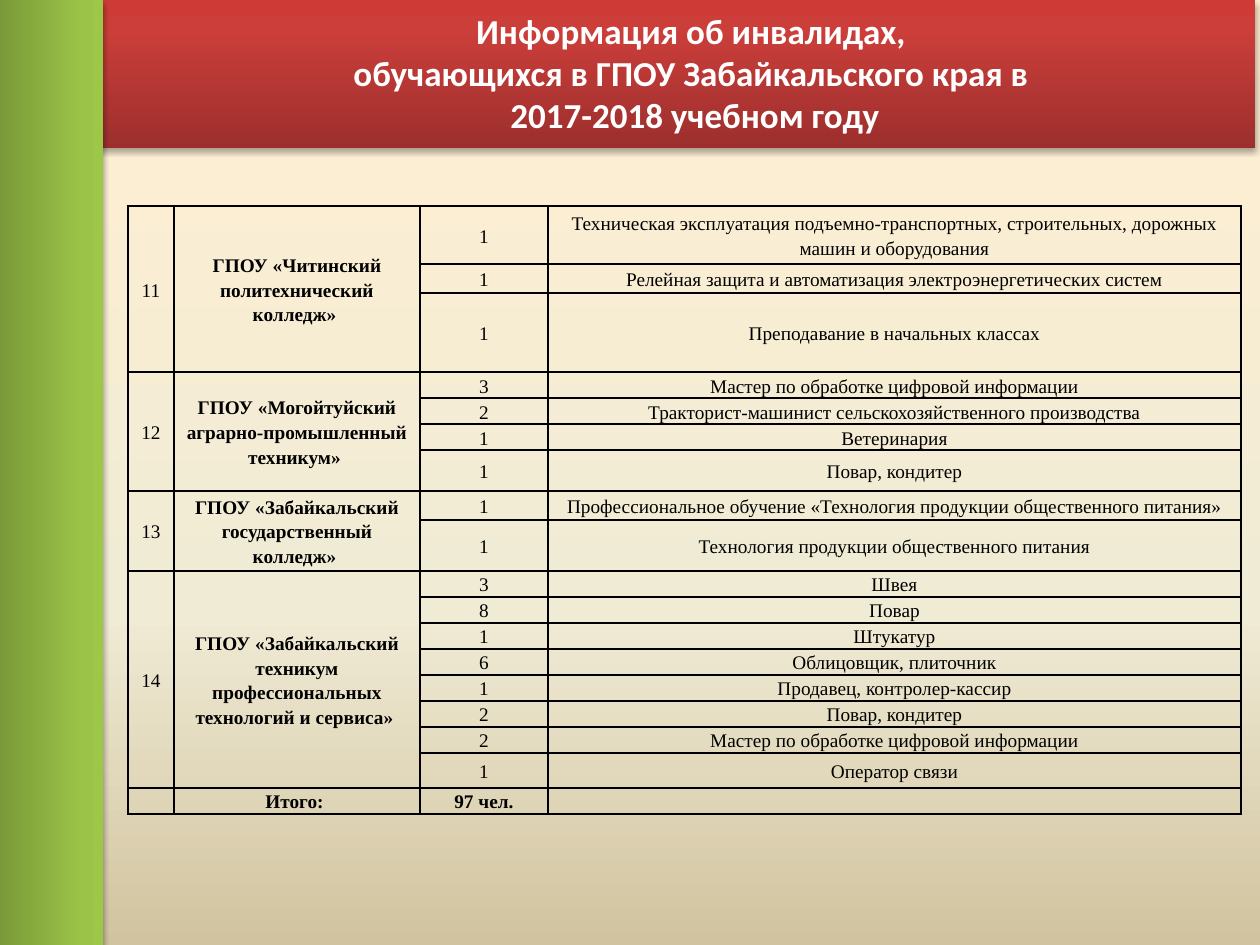
from lxml.etree import SubElement
from pptx import Presentation
from pptx.dml.color import RGBColor
from pptx.enum.shapes import MSO_SHAPE
from pptx.enum.text import MSO_ANCHOR, MSO_AUTO_SIZE, PP_ALIGN
from pptx.oxml import parse_xml
from pptx.oxml.ns import nsdecls, qn
from pptx.util import Pt

PX = 914400 / 126
COLORS = {
    "text": "000000", "title": "FFFFFF", "shadow": "000000", "border": "000000",
    "sand_top": "FFEFD1", "sand_mid": "F0EBD5", "sand_bottom": "D1C39F",
    "red_dark": "9C2F2D", "red_mid": "CB3E3A", "red": "CE3B37",
    "green_dark": "779737", "green_mid": "9BC348", "green": "9DC746",
}
TITLE_FORMAT = {"name": "Calibri", "size": Pt(20), "bold": True}
CELL_FORMAT = {"name": "Times New Roman", "size": Pt(11)}
CELL_FRAME = {"margin_left": Pt(3), "margin_right": Pt(3), "margin_top": 0,
              "margin_bottom": 0, "vertical_anchor": MSO_ANCHOR.MIDDLE}

TITLE_LINES = ["Информация об инвалидах, ",
               "обучающихся в ГПОУ Забайкальского края в ",
               "2017-2018 учебном году"]
COLUMN_WIDTHS = [46, 246, 128, 693]
# Each college: number, name, then (students, profession, row height)
COLLEGES = [
    ("11", "ГПОУ «Читинский политехнический колледж» ", [
        ("1", "Техническая эксплуатация подъемно-транспортных, строительных, "
              "дорожных машин и оборудования", 58),
        ("1", "Релейная защита и автоматизация электроэнергетических систем", 29),
        ("1", "Преподавание в начальных классах", 79)]),
    ("12", "ГПОУ «Могойтуйский аграрно-промышленный техникум» ", [
        ("3", "Мастер по обработке цифровой информации", 26),
        ("2", "Тракторист-машинист сельскохозяйственного производства", 26),
        ("1", "Ветеринария", 26),
        ("1", "Повар, кондитер", 41)]),
    ("13", "ГПОУ «Забайкальский государственный колледж» ", [
        ("1", "Профессиональное обучение «Технология продукции "
              "общественного питания»", 29),
        ("1", "Технология продукции общественного питания", 51)]),
    ("14", "ГПОУ «Забайкальский техникум профессиональных технологий и сервиса» ", [
        ("3", "Швея", 26),
        ("8", "Повар", 26),
        ("1", "Штукатур", 26),
        ("6", "Облицовщик, плиточник", 26),
        ("1", "Продавец, контролер-кассир", 26),
        ("2", "Повар, кондитер", 26),
        ("2", "Мастер по обработке цифровой информации", 26),
        ("1", "Оператор связи", 35)]),
]
TOTAL_ROW = ["", "Итого: ", "97 чел.", ""]
TOTAL_HEIGHT = 26


def emu(*lengths):
    return [round(length * PX) for length in lengths]


def apply_format(target, values):
    for key, value in values.items():
        setattr(target, key, value)


def fill_gradient(fill, owner, stops, angle):
    fill.gradient()
    fill.gradient_angle = angle
    stop_list = owner.find(".//" + qn("a:gsLst"))
    stop_list.clear()
    for position, color in stops:
        stop = SubElement(stop_list, qn("a:gs"), pos=str(position * 1000))
        SubElement(stop, qn("a:srgbClr"), val=COLORS[color])


def add_band(slide, box, hue, rotation=0):
    band = slide.shapes.add_shape(MSO_SHAPE.RECTANGLE, *emu(*box))
    band.rotation = rotation
    band.line.fill.background()
    stops = [(0, hue + "_dark"), (80, hue + "_mid"), (100, hue)]
    fill_gradient(band.fill, band.element, stops, 90)
    band.element.spPr.append(parse_xml(
        f'<a:effectLst {nsdecls("a")}><a:outerShdw blurRad="{Pt(3.1)}" '
        f'dist="{Pt(1.8)}" dir="5400000" rotWithShape="0">'
        f'<a:srgbClr val="{COLORS["shadow"]}"><a:alpha val="35000"/></a:srgbClr>'
        '</a:outerShdw></a:effectLst>'))


def write_paragraph(paragraph, text, values, color, spacing):
    paragraph.alignment = PP_ALIGN.CENTER
    paragraph.line_spacing = spacing
    run = paragraph.add_run()
    run.text = text
    apply_format(run.font, values)
    run.font.color.rgb = RGBColor.from_string(COLORS[color])


def place_title(slide, box):
    title = slide.shapes.title
    slide.shapes.element.append(title.element)  # in front of the bands
    apply_format(title, dict(zip(("left", "top", "width", "height"), emu(*box))))
    frame = title.text_frame
    apply_format(frame, {"word_wrap": True, "auto_size": MSO_AUTO_SIZE.NONE,
                         "vertical_anchor": MSO_ANCHOR.MIDDLE})
    for index, line in enumerate(TITLE_LINES):
        paragraph = frame.add_paragraph() if index else frame.paragraphs[0]
        write_paragraph(paragraph, line, TITLE_FORMAT, "title", 1.0)


def style_cell(cell):
    apply_format(cell, CELL_FRAME)
    cell.fill.background()
    properties = cell._tc.get_or_add_tcPr()
    for index, side in enumerate(("lnL", "lnR", "lnT", "lnB")):
        properties.insert(index, parse_xml(
            f'<a:{side} {nsdecls("a")} w="{Pt(1)}"><a:solidFill>'
            f'<a:srgbClr val="{COLORS["border"]}"/></a:solidFill></a:{side}>'))


def write_cell(cell, text, bold=False):
    paragraph = cell.text_frame.paragraphs[0]
    write_paragraph(paragraph, text, {**CELL_FORMAT, "bold": bold}, "text", 1.15)


def add_college_table(slide, left, top):
    heights = [row[2] for college in COLLEGES for row in college[2]] + [TOTAL_HEIGHT]
    box = emu(left, top, sum(COLUMN_WIDTHS), sum(heights))
    table = slide.shapes.add_table(len(heights), len(COLUMN_WIDTHS), *box).table
    apply_format(table, {"first_row": False, "horz_banding": False})
    for column, width in zip(table.columns, emu(*COLUMN_WIDTHS)):
        column.width = width
    for row, height in zip(table.rows, emu(*heights)):
        row.height = height
    for cell in table.iter_cells():
        style_cell(cell)

    # Colleges, with number and name merged over their professions
    first = 0
    for number, name, professions in COLLEGES:
        last = first + len(professions) - 1
        for column, text in enumerate((number, name)):
            table.cell(first, column).merge(table.cell(last, column))
            write_cell(table.cell(first, column), text, bold=column == 1)
        for row, (students, profession, _) in enumerate(professions, first):
            write_cell(table.cell(row, 2), students)
            write_cell(table.cell(row, 3), profession)
        first = last + 1

    # Total
    for column, text in enumerate(TOTAL_ROW):
        if text:
            write_cell(table.cell(first, column), text, bold=True)

    # Small type in empty cells keeps the rows low
    for cell in table.iter_cells():
        if not cell.text:
            SubElement(cell.text_frame.paragraphs[0]._p, qn("a:endParaRPr"), sz="1100")


def main():
    presentation = Presentation()
    presentation.slide_width, presentation.slide_height = emu(1260, 945)
    slide = presentation.slides.add_slide(presentation.slide_layouts[5])
    fill_gradient(slide.background.fill, slide.element,
                  [(0, "sand_top"), (65, "sand_mid"), (100, "sand_bottom")], 270)
    add_band(slide, (-5, 0, 1260, 148), "red")
    add_band(slide, (-423, 419, 945, 108), "green", rotation=90)
    place_title(slide, (194, 10, 1002, 125))
    add_college_table(slide, 128, 206)
    presentation.save("out.pptx")


if __name__ == "__main__":
    main()
